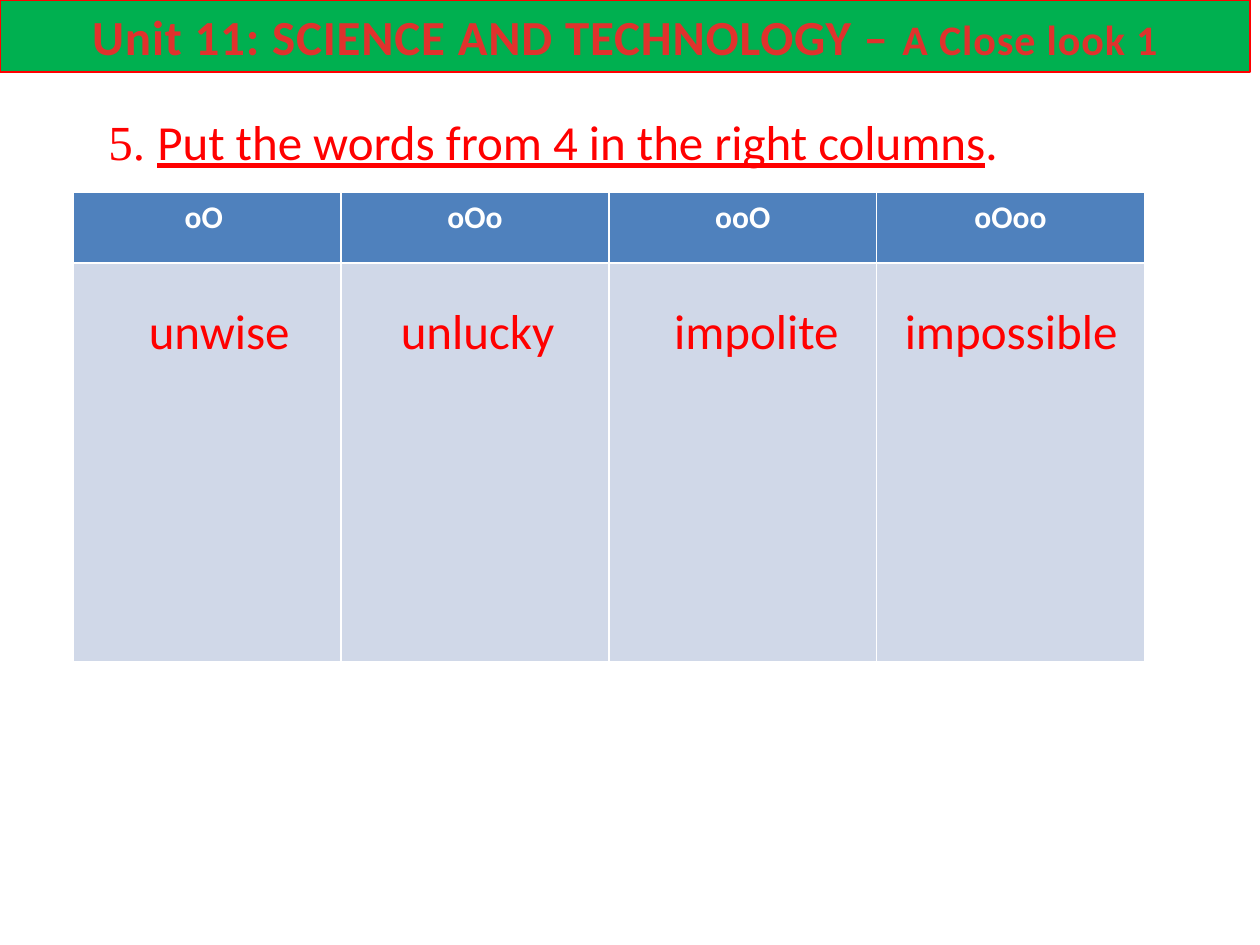
from pptx import Presentation
from pptx.dml.color import RGBColor
from pptx.enum.text import MSO_ANCHOR as Anchor, MSO_AUTO_SIZE as AutoSize, PP_ALIGN as Align
from pptx.util import Cm, Pt

RED, WHITE = "FF0000", "FFFFFF"
BANNER = [("Unit 11: SCIENCE AND TECHNOLOGY – ", 28), ("A Close look 1", 24)]
INSTRUCTION = [(" 5. ", "Times New Roman", False),
               ("Put the words from 4 in the right columns", "Calibri", True),
               (".", "Calibri", False)]
PATTERNS = ["oO ", "oOo", "ooO", "oOoo"]
ANSWERS = [("unwise", 2.75, 3.39), ("unlucky", 7.83, 3.64),
           ("impolite", 13.34, 3.86), ("impossible", 17.99, 4.85)]
LINE_HEIGHT = 1.45


def rgb(code):
    return RGBColor.from_string(code)


def style(run, size, color, font="Calibri", bold=False, underline=False):
    run.font.size = Pt(size)
    run.font.color.rgb = rgb(color)
    run.font.name = font
    run.font.bold = bold
    run.font.underline = underline


def add_run(paragraph, text, *args, **kwargs):
    run = paragraph.add_run()
    run.text = text
    style(run, *args, **kwargs)
    return run


def add_banner(slide):
    banner = slide.shapes.title
    banner.left, banner.top, banner.width, banner.height = Cm(0), Cm(0), Cm(25.2), Cm(LINE_HEIGHT)
    banner.fill.solid()
    banner.fill.fore_color.rgb = rgb("00B050")
    banner.line.color.rgb = rgb(RED)
    banner.line.width = Pt(0.75)
    frame = banner.text_frame
    frame.auto_size = AutoSize.NONE
    frame.vertical_anchor = Anchor.TOP
    heading = frame.paragraphs[0]
    heading.alignment = Align.CENTER
    for text, size in BANNER:
        run = add_run(heading, text, size, "E0322D", bold=True)
        run.font._element.set("spc", "50")


def add_line(slide, left, top, width, wrap):
    frame = slide.shapes.add_textbox(Cm(left), Cm(top), Cm(width), Cm(LINE_HEIGHT)).text_frame
    frame.word_wrap = wrap
    frame.auto_size = AutoSize.SHAPE_TO_FIT_TEXT
    return frame.paragraphs[0]


def add_stress_table(slide):
    table = slide.shapes.add_table(2, len(PATTERNS), Cm(1.48), Cm(3.88),
                                   Cm(21.59), Cm(9.45)).table
    for row, height in zip(table.rows, (1.42, 8.03)):
        row.height = Cm(height)
    for column, pattern in enumerate(PATTERNS):
        header, body = table.cell(0, column), table.cell(1, column)
        for cell, color in ((header, "4F81BD"), (body, "D0D8E8")):
            cell.fill.solid()
            cell.fill.fore_color.rgb = rgb(color)
        header.text_frame.text = pattern
        label = header.text_frame.paragraphs[0]
        label.alignment = Align.CENTER
        style(label.runs[0], 18, WHITE, bold=True)


def main():
    """Build the word-stress sorting slide."""
    deck = Presentation()
    deck.slide_width, deck.slide_height = Cm(25.4), Cm(19.05)
    slide = deck.slides.add_slide(deck.slide_layouts[5])
    add_banner(slide)
    instruction = add_line(slide, 1.69, 2.12, 22.86, True)
    for text, font, underline in INSTRUCTION:
        add_run(instruction, text, 28, RED, font, underline=underline)
    add_stress_table(slide)
    for word, left, width in ANSWERS:
        add_run(add_line(slide, left, 5.93, width, False), word, 28, RED)
    deck.save("out.pptx")


if __name__ == "__main__":
    main()
